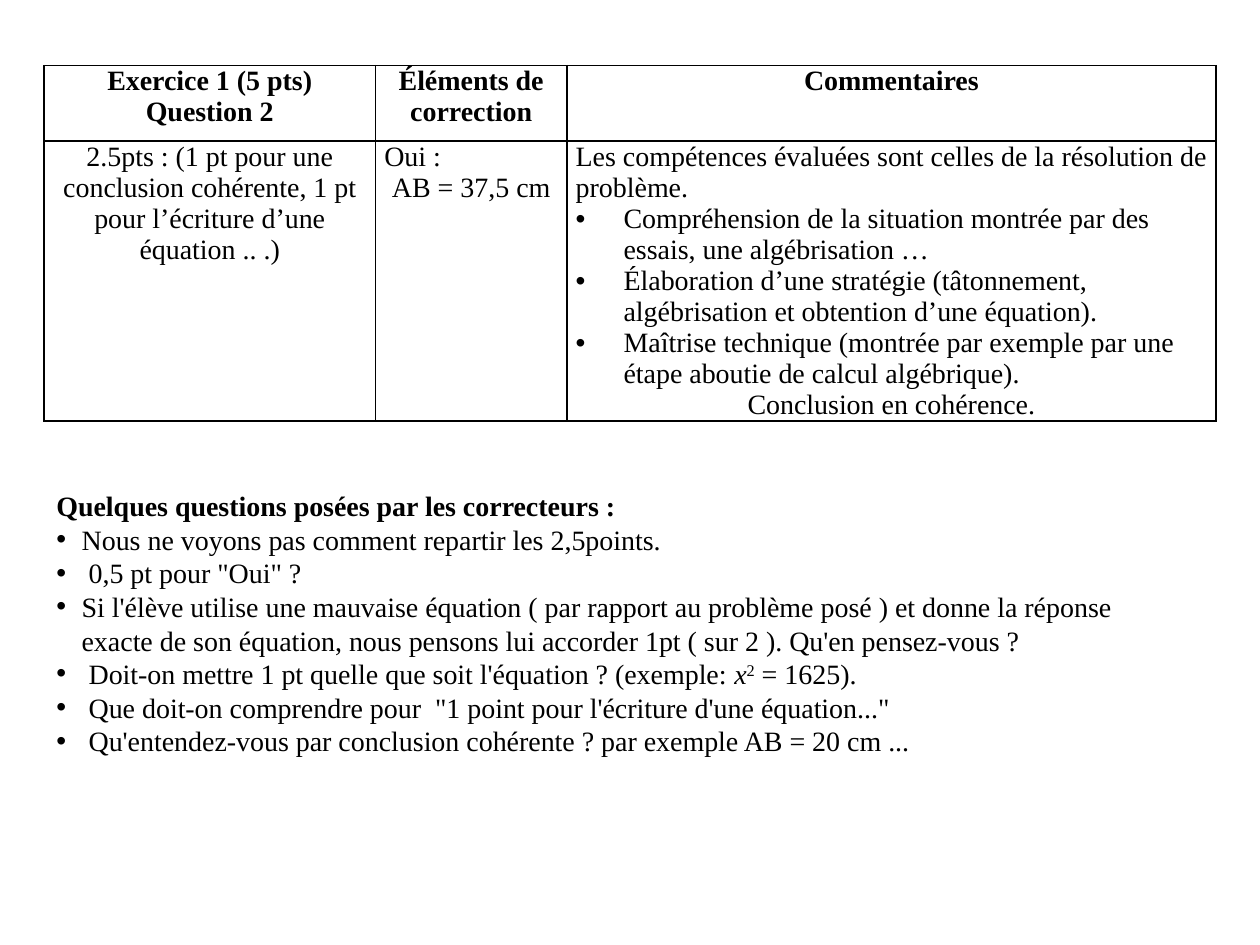
from lxml.etree import SubElement
from pptx import Presentation
from pptx.dml.color import RGBColor
from pptx.enum.text import MSO_AUTO_SIZE, PP_ALIGN
from pptx.oxml.ns import qn
from pptx.util import Emu, Inches, Pt

BLACK = RGBColor(0, 0, 0)
FONT, SIZE = "Times New Roman", Pt(16)
LEFT, TABLE_TOP, QUESTIONS_TOP = 0.35, 0.52, 3.83
COLUMNS, ROWS = (2.63, 1.52, 5.15), (0.6, 2.22)
CELL_INDENT, QUESTION_INDENT = 0.38, 0.2

# Content: each paragraph is (style, text or list of (text, run style))
TABLE = [
    [
        [("heading", "Exercice 1 (5 pts)"), ("heading", "Question 2")],
        [("heading", "Éléments de correction")],
        [("heading", "Commentaires")],
    ],
    [
        [("center", "2.5pts : (1 pt pour une conclusion cohérente, 1 pt "
                    "pour l’écriture d’une équation .. .)")],
        [("left", "Oui :"), ("center", "AB = 37,5 cm")],
        [
            ("left", "Les compétences évaluées sont celles de la résolution de problème."),
            ("bullet", "Compréhension de la situation montrée par des essais, "
                       "une algébrisation …"),
            ("bullet", "Élaboration d’une stratégie (tâtonnement, algébrisation "
                       "et obtention d’une équation)."),
            ("bullet", "Maîtrise technique (montrée par exemple par une étape "
                       "aboutie de calcul algébrique)."),
            ("center", "Conclusion en cohérence."),
        ],
    ],
]
QUESTIONS = [
    ("title", "Quelques questions posées par les correcteurs :"),
    ("bullet", "Nous ne voyons pas comment repartir les 2,5points."),
    ("bullet", " 0,5 pt pour \"Oui\" ?"),
    ("bullet", "Si l'élève utilise une mauvaise équation ( par rapport au problème posé ) "
               "et donne la réponse exacte de son équation, nous pensons lui accorder "
               "1pt ( sur 2 ). Qu'en pensez-vous ?"),
    ("bullet", [(" Doit-on mettre 1 pt quelle que soit l'équation ? (exemple: ", None),
                ("x", "italic"), ("2", "superscript"), (" = 1625).", None)]),
    ("bullet", " Que doit-on comprendre pour  \"1 point pour l'écriture d'une équation...\""),
    ("bullet", " Qu'entendez-vous par conclusion cohérente ? par exemple AB = 20 cm ..."),
]


def add_bullet(paragraph, indent):
    properties = paragraph._p.get_or_add_pPr()
    properties.set("marL", str(Inches(indent)))
    properties.set("indent", str(-Inches(indent)))
    SubElement(properties, qn("a:buFont"), typeface="Arial")
    SubElement(properties, qn("a:buChar"), char="•")


def write(text_frame, paragraphs, indent):
    for index, (style, content) in enumerate(paragraphs):
        paragraph = text_frame.add_paragraph() if index else text_frame.paragraphs[0]
        centered = style in ("heading", "center")
        paragraph.alignment = PP_ALIGN.CENTER if centered else PP_ALIGN.LEFT
        if style == "bullet":
            add_bullet(paragraph, indent)
        font = paragraph.font
        font.name, font.size = FONT, SIZE
        font.bold = style in ("heading", "title")
        font.color.rgb = BLACK
        for text, run_style in [(content, None)] if isinstance(content, str) else content:
            run = paragraph.add_run()
            run.text = text
            if run_style == "italic":
                run.font.italic = True
            elif run_style == "superscript":
                run._r.get_or_add_rPr().set("baseline", "30000")


def format_cell(cell):
    cell.margin_left = cell.margin_right = Inches(0.07)
    cell.margin_top = cell.margin_bottom = Emu(0)
    properties = cell._tc.get_or_add_tcPr()
    for side in ("lnL", "lnR", "lnT", "lnB"):
        line = SubElement(properties, qn(f"a:{side}"), w=str(Pt(1)))
        fill = SubElement(line, qn("a:solidFill"))
        SubElement(fill, qn("a:srgbClr"), val=str(BLACK))
    cell.fill.background()


presentation = Presentation()
presentation.slide_width, presentation.slide_height = Inches(10), Inches(7.5)
slide = presentation.slides.add_slide(presentation.slide_layouts[6])

# Marking table
table = slide.shapes.add_table(
    len(ROWS), len(COLUMNS), Inches(LEFT), Inches(TABLE_TOP),
    Inches(sum(COLUMNS)), Inches(sum(ROWS))).table
table.first_row = table.horz_banding = False
for column, width in zip(table.columns, COLUMNS):
    column.width = Inches(width)
for row, height, contents in zip(table.rows, ROWS, TABLE):
    row.height = Inches(height)
    for cell, paragraphs in zip(row.cells, contents):
        format_cell(cell)
        write(cell.text_frame, paragraphs, CELL_INDENT)

# Questions from the markers
questions = slide.shapes.add_textbox(
    Inches(LEFT), Inches(QUESTIONS_TOP), Inches(8.74), Inches(2.26)).text_frame
questions.word_wrap = True
questions.auto_size = MSO_AUTO_SIZE.SHAPE_TO_FIT_TEXT
write(questions, QUESTIONS, QUESTION_INDENT)

presentation.save("out.pptx")
